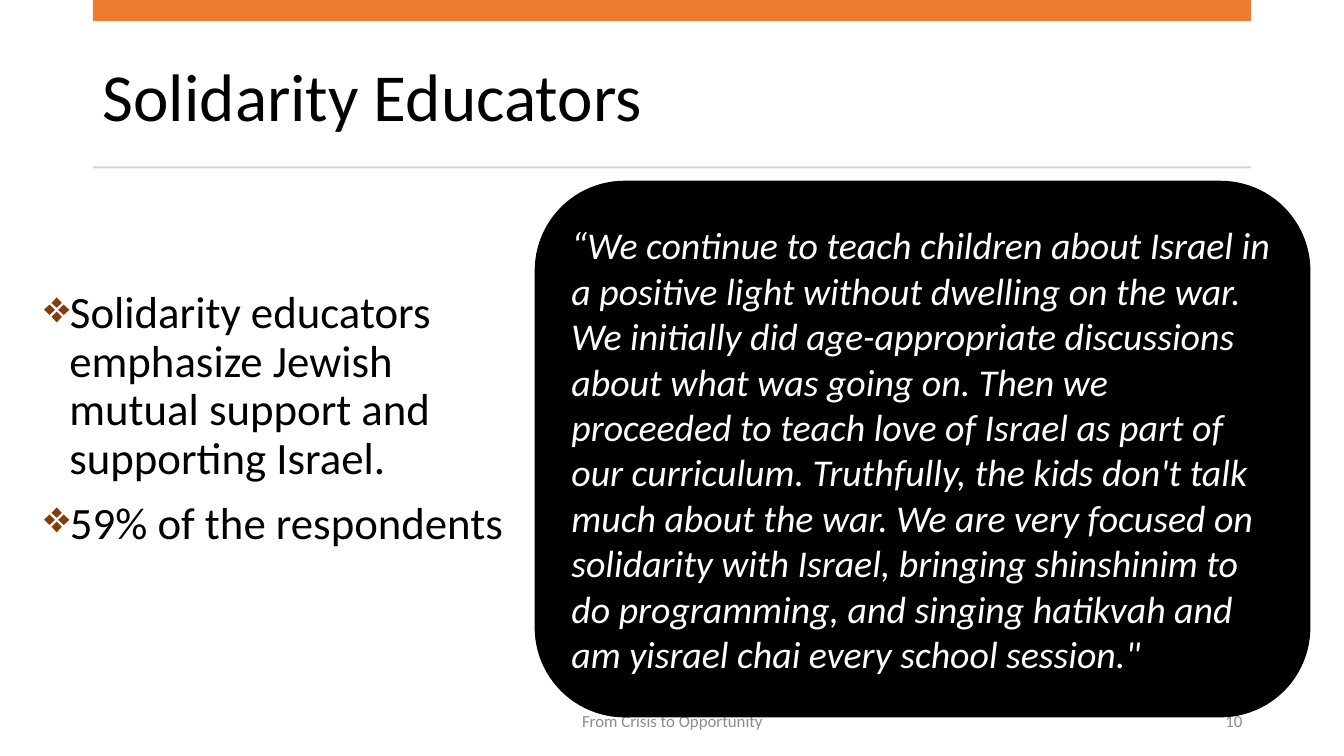
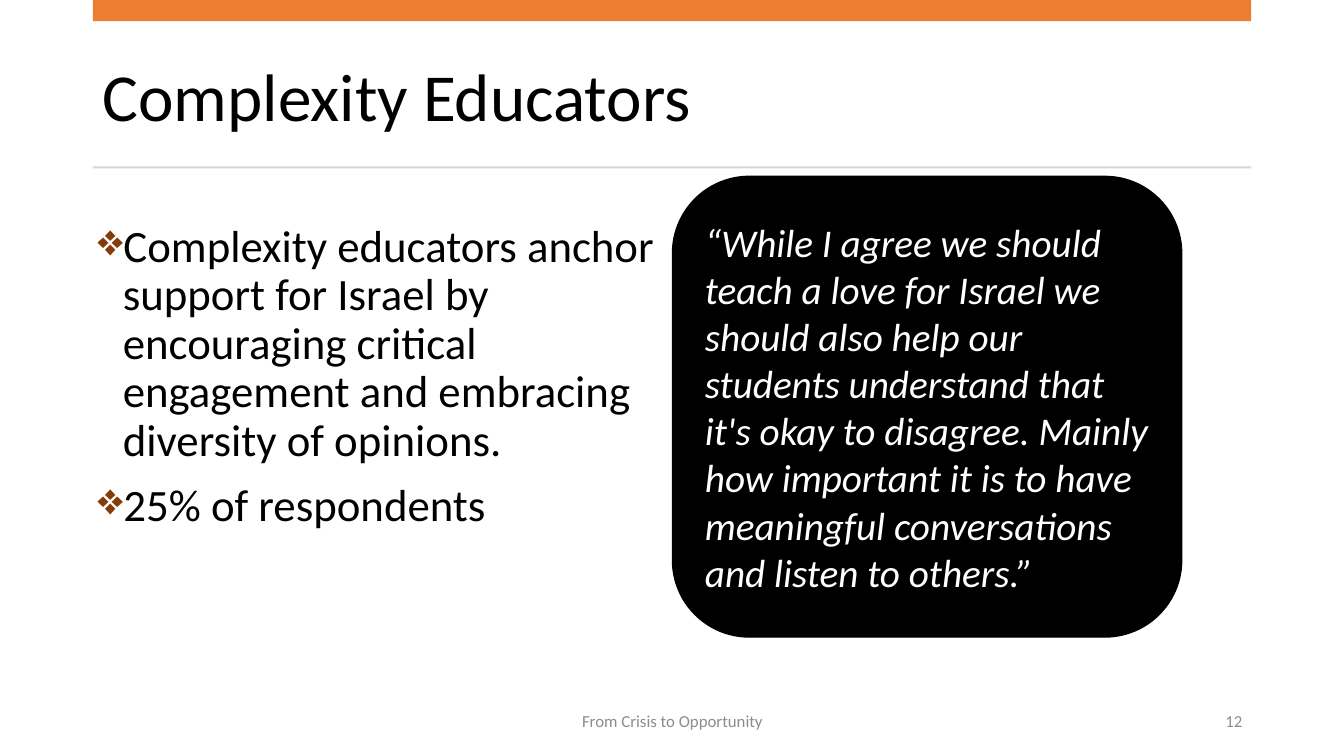
import pptx
import pptx.dml.color
import pptx.enum.shapes
import pptx.enum.text
import pptx.oxml.ns
import pptx.util
from lxml import etree

Inches, Pt = pptx.util.Inches, pptx.util.Pt
ALIGN = pptx.enum.text.PP_ALIGN
ANCHOR = pptx.enum.text.MSO_ANCHOR
SHAPE = pptx.enum.shapes.MSO_SHAPE

COLORS = {
    "accent": "ED7D31",
    "rule": "D5D5D5",
    "footer": "8C8C8C",
    "bullet": "843C0B",
    "black": "000000",
    "white": "FFFFFF",
}
FONT = "Calibri"
BULLET = "❖"
FOOTER = "From Crisis to Opportunity"
MARGIN, CONTENT_WIDTH = 0.92, 11.49

SLIDES = [
    {
        "title": "Solidarity Educators",
        "number": 10,
        "points": [
            "Solidarity educators emphasize Jewish mutual support and supporting Israel.",
            "59% of the respondents",
        ],
        "points_box": (0.34, 2.83, 4.97, 2.77),
        "points_spacing": {"space_before": Pt(6), "space_after": Pt(6)},
        "quote": "“We continue to teach children about Israel in a positive light "
                 "without dwelling on the war. We initially did age-appropriate "
                 "discussions about what was going on. Then we proceeded to teach "
                 "love of Israel as part of our curriculum. Truthfully, the kids "
                 "don't talk much about the war. We are very focused on solidarity "
                 "with Israel, bringing shinshinim to do programming, and singing "
                 "hatikvah and am yisrael chai every school session.\"",
        "quote_box": (5.31, 1.8, 7.68, 5.31),
        "quote_size": 27,
    },
    {
        "title": "Complexity Educators",
        "number": 12,
        "points": [
            "Complexity educators anchor support for Israel by encouraging critical "
            "engagement and embracing diversity of opinions.",
            "25% of respondents",
        ],
        "points_box": (0.87, 2.17, 5.85, 4.28),
        "points_spacing": {"space_before": Pt(12)},
        "quote": "“While I agree we should teach a love for Israel we should also "
                 "help our students understand that it's okay to disagree. Mainly "
                 "how important it is to have meaningful conversations and listen "
                 "to others.”",
        "quote_box": (6.67, 1.75, 5.05, 4.57),
        "quote_size": 28,
    },
]


def rgb(name):
    return pptx.dml.color.RGBColor.from_string(COLORS[name])


def set_all(target, values):
    for attribute, value in values.items():
        setattr(target, attribute, value)


def write(holder, lines, size, color, anchor=ANCHOR.MIDDLE, italic=False, **spacing):
    """Fill a shape or text box with one paragraph per line."""
    frame = holder.text_frame
    set_all(frame, {"word_wrap": True, "vertical_anchor": anchor})
    frame.text = "\n".join(lines)
    for paragraph in frame.paragraphs:
        set_all(paragraph, {"alignment": ALIGN.LEFT, **spacing})
        for run in paragraph.runs:
            set_all(run.font, {"name": FONT, "size": Pt(size), "italic": italic})
            run.font.color.rgb = rgb(color)
    return frame


def add_text(slide, box, lines, size, color, **options):
    holder = slide.shapes.add_textbox(*map(Inches, box))
    return write(holder, lines, size, color, **options)


def add_block(slide, kind, box, color):
    block = slide.shapes.add_shape(kind, *map(Inches, box))
    block.shadow.inherit = False
    block.fill.solid()
    block.fill.fore_color.rgb = rgb(color)
    block.line.fill.background()
    return block


def add_bullet(paragraph):
    qn = pptx.oxml.ns.qn
    properties = paragraph._p.get_or_add_pPr()
    properties.set("marL", str(Inches(0.25)))
    properties.set("indent", str(-Inches(0.25)))
    bullet_color = etree.SubElement(properties, qn("a:buClr"))
    etree.SubElement(bullet_color, qn("a:srgbClr"), val=COLORS["bullet"])
    etree.SubElement(properties, qn("a:buChar"), char=BULLET)


def add_frame(slide, title, number):
    """Title, top band, rule and footer shared by all slides."""
    add_text(slide, (MARGIN, 0.39, 11.15, 1.19), [title], 48, "black", line_spacing=0.9)
    for top, height, color in ((0, 0.21, "accent"), (1.65, 0.02, "rule")):
        add_block(slide, SHAPE.RECTANGLE, (MARGIN, top, CONTENT_WIDTH, height), color)
    for left, width, text, alignment in (
        (9.42, 3, str(number), ALIGN.RIGHT),
        (4.42, 4.5, FOOTER, ALIGN.CENTER),
    ):
        add_text(slide, (left, 6.95, width, 0.4), [text], 12, "footer", alignment=alignment)


def add_points(slide, box, points, spacing):
    frame = add_text(slide, box, points, 32, "black", anchor=ANCHOR.TOP,
                     line_spacing=0.9, **spacing)
    for paragraph in frame.paragraphs:
        add_bullet(paragraph)


def add_quote(slide, box, quote, size):
    card = add_block(slide, SHAPE.ROUNDED_RECTANGLE, box, "black")
    card.line.color.rgb = rgb("black")
    card.line.width = Pt(1)
    write(card, [quote], size, "white", italic=True)


def main():
    deck = pptx.Presentation()
    set_all(deck, {"slide_width": Inches(13.33), "slide_height": Inches(7.5)})
    for content in SLIDES:
        slide = deck.slides.add_slide(deck.slide_layouts[6])
        add_frame(slide, content["title"], content["number"])
        add_points(slide, content["points_box"], content["points"], content["points_spacing"])
        add_quote(slide, content["quote_box"], content["quote"], content["quote_size"])
    deck.save("out.pptx")


if __name__ == "__main__":
    main()
